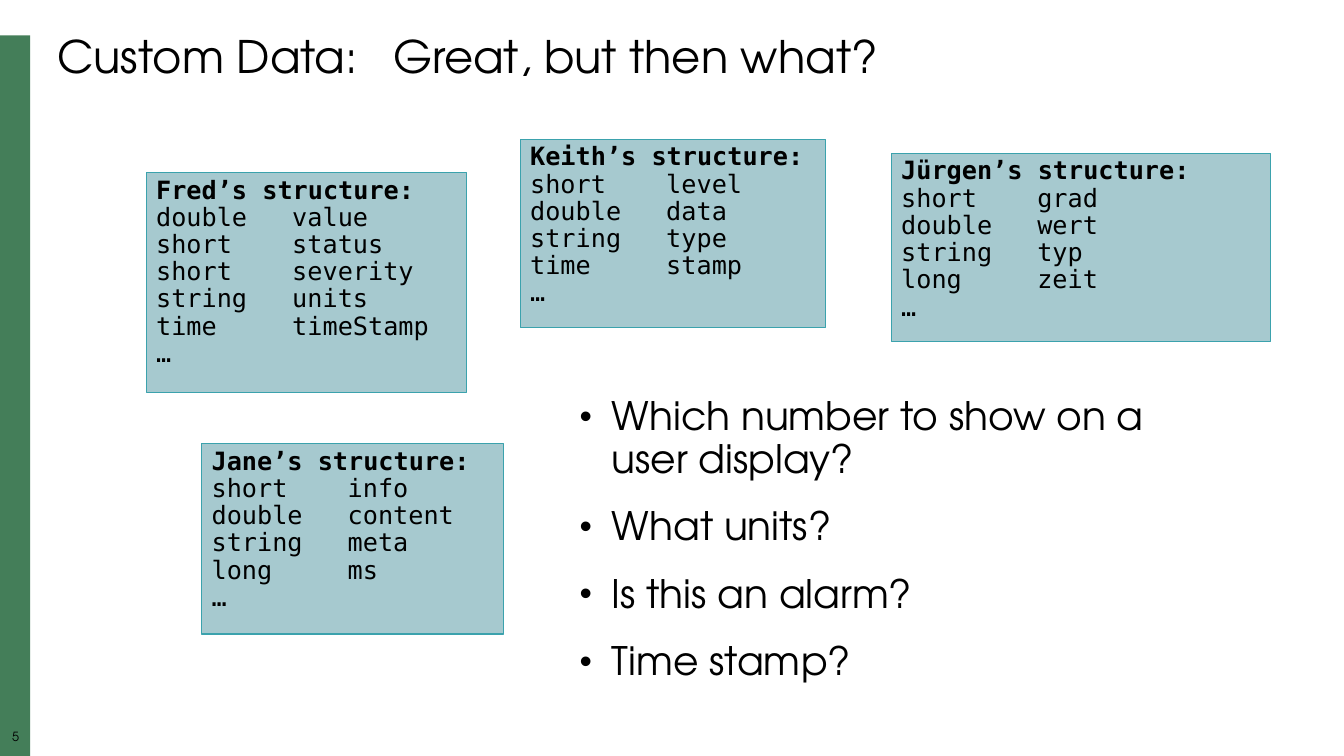
"""Build the slide on custom data structures and the questions they raise."""
from lxml import etree
from pptx import Presentation
from pptx.dml.color import RGBColor
from pptx.enum.shapes import MSO_SHAPE
from pptx.enum.text import MSO_ANCHOR, PP_ALIGN
from pptx.oxml.ns import qn
from pptx.util import Inches, Pt

RECTANGLE = MSO_SHAPE.RECTANGLE
TOP = MSO_ANCHOR.TOP
LEFT, CENTER = PP_ALIGN.LEFT, PP_ALIGN.CENTER
SANS, MONO = "TeX Gyre Adventor", "DejaVu Sans Mono"


def color(hex_text):
    return RGBColor.from_string(hex_text)


def add_text(paragraph, text, size, font, bold=False, tab=None):
    if tab:
        tabs = etree.SubElement(paragraph._p.get_or_add_pPr(), qn("a:tabLst"))
        etree.SubElement(tabs, qn("a:tab"), pos=str(Inches(tab)), algn="l")
    paragraph.line_spacing = 0.9
    run = paragraph.add_run()
    run.text = text
    run.font.size = Pt(size)
    run.font.name = font
    run.font.bold = bold
    run.font.color.rgb = color("000000")


prs = Presentation()
prs.slide_width, prs.slide_height = Inches(13.33), Inches(7.5)
slide = prs.slides.add_slide(prs.slide_layouts[6])
shapes = slide.shapes

side_band = shapes.add_shape(RECTANGLE, 0, Inches(0.35), Inches(0.3), Inches(7.15))
side_band.shadow.inherit = False
side_band.fill.solid()
side_band.fill.fore_color.rgb = color("447E59")
side_band.line.fill.background()

page_number = shapes.add_textbox(0, Inches(7.25), Inches(0.31), Inches(0.17)).text_frame
page_number.word_wrap = True
page_number.margin_left = page_number.margin_right = 0
page_number.margin_top = page_number.margin_bottom = 0
page_number.paragraphs[0].alignment = CENTER
add_text(page_number.paragraphs[0], "5", 9, SANS)

title = shapes.add_textbox(Inches(0.47), Inches(0.3), Inches(12.5), Inches(0.59)).text_frame
title.word_wrap = True
add_text(title.paragraphs[0], "Custom Data:\tGreat, but then what?", 32, SANS, tab=3.33)

structures = [
    ("Fred", 1.45, 1.71, 3.18, 2.18,
     [("double", "value"), ("short", "status"), ("short", "severity"),
      ("string", "units"), ("time", "timeStamp")]),
    ("Keith", 5.16, 1.38, 3.03, 1.87,
     [("short", "level"), ("double", "data"), ("string", "type"), ("time", "stamp")]),
    ("Jane", 2, 4.4, 2.99, 1.89,
     [("short", "info"), ("double", "content"), ("string", "meta"), ("long", "ms")]),
    ("Jürgen", 8.84, 1.52, 3.76, 1.87,
     [("short", "grad"), ("double", "wert"), ("string", "typ"), ("long", "zeit")]),
]
for owner, left, top, width, height, fields in structures:
    card = shapes.add_shape(RECTANGLE, Inches(left), Inches(top), Inches(width), Inches(height))
    card.shadow.inherit = False
    card.fill.solid()
    card.fill.fore_color.rgb = color("A6C9CF")
    card.line.color.rgb = color("3BA2AD")
    card.line.width = Pt(0.75)
    card.text_frame.word_wrap = True
    card.text_frame.vertical_anchor = TOP
    listing = card.text_frame.paragraphs[0]
    listing.alignment = LEFT
    add_text(listing, f"{owner}’s structure:", 18, MONO, bold=True, tab=1.35)
    for line in [f"{kind}\t{field}" for kind, field in fields] + ["…"]:
        listing.add_line_break()
        add_text(listing, line, 18, MONO)

questions = ["Which number to show on a user display?", "What units?",
             "Is this an alarm?", "Time stamp?"]
body = shapes.add_textbox(Inches(5.65), Inches(3.89), Inches(6.53), Inches(3.1)).text_frame
body.word_wrap = True
for index, question in enumerate(questions):
    paragraph = body.add_paragraph() if index else body.paragraphs[0]
    properties = paragraph._p.get_or_add_pPr()
    properties.set("marL", str(Inches(0.32)))
    properties.set("indent", str(-Inches(0.32)))
    bullet_color = etree.SubElement(properties, qn("a:buClr"))
    etree.SubElement(bullet_color, qn("a:srgbClr"), val="000000")
    etree.SubElement(properties, qn("a:buSzPct"), val="90000")
    etree.SubElement(properties, qn("a:buFont"), typeface="Arial")
    etree.SubElement(properties, qn("a:buChar"), char="•")
    if index:
        paragraph.space_before = Pt(18)
    add_text(paragraph, question, 28, SANS)

prs.save("out.pptx")
